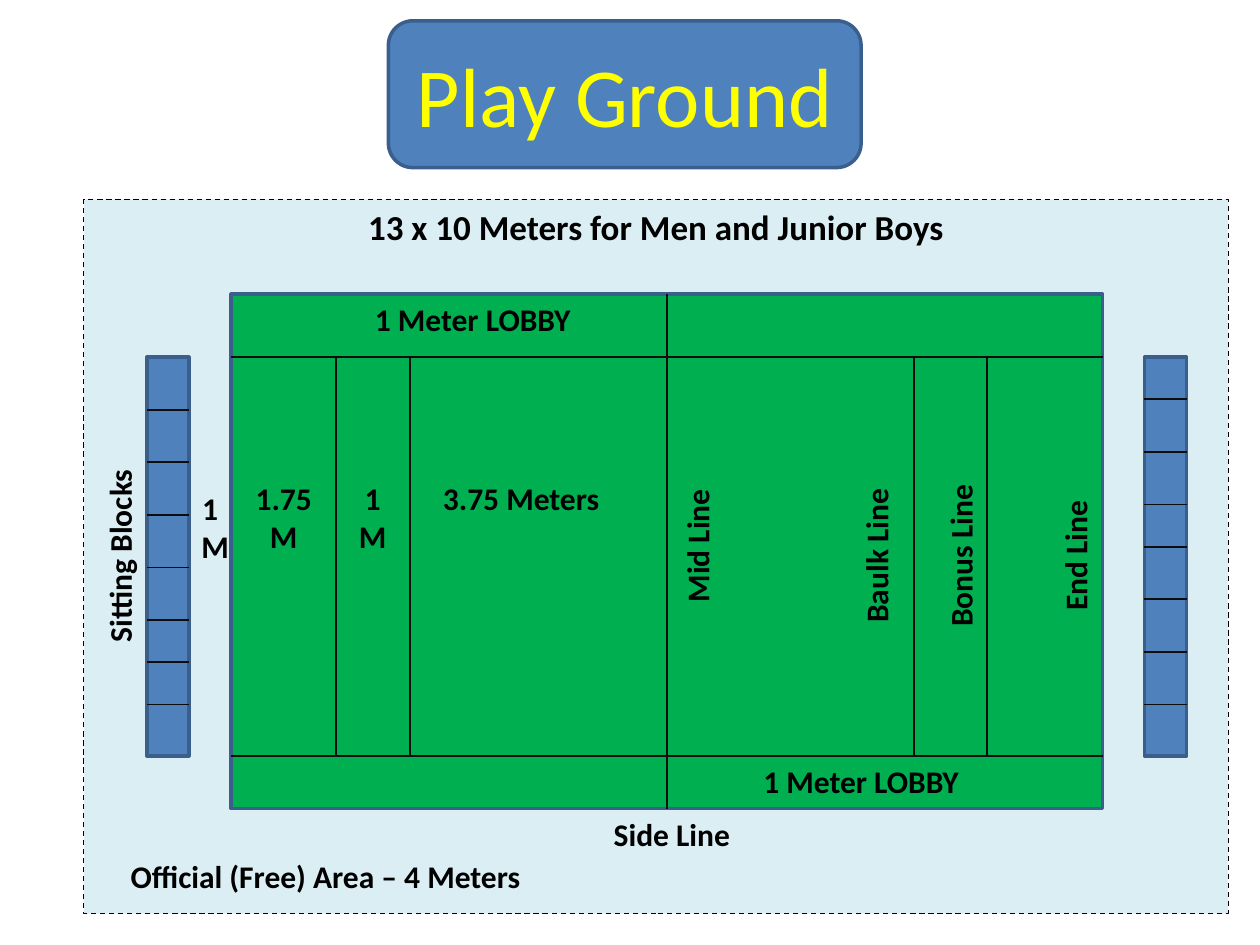
from dataclasses import dataclass
from itertools import accumulate

from pptx import Presentation
from pptx import util as u
from pptx.dml.color import RGBColor
from pptx.enum import dml, shapes, text
from pptx.oxml.ns import qn

BLACK, MARKING, YELLOW = "000000", "0D0D0D", "FFFF00"
BLUE, BLUE_EDGE, GREEN, PALE = "4F81BD", "3A5F8C", "00B050", "DBEEF4"
CENTER, LEFT = text.PP_ALIGN.CENTER, text.PP_ALIGN.LEFT
RECT, ROUNDED = shapes.MSO_SHAPE.RECTANGLE, shapes.MSO_SHAPE.ROUNDED_RECTANGLE


@dataclass(frozen=True)
class Box:
    """Position and size in centimetres."""
    left: float
    top: float
    width: float
    height: float

    @property
    def right(self) -> float:
        return self.left + self.width

    @property
    def bottom(self) -> float:
        return self.top + self.height

    def lengths(self) -> list:
        return [u.Cm(v) for v in (self.left, self.top, self.width, self.height)]


@dataclass(frozen=True)
class Label:
    wording: str
    left: float
    top: float
    width: float
    height: float = 1.03
    rotation: int = 0
    align: text.PP_ALIGN = CENTER


@dataclass(frozen=True)
class Bench:
    box: Box
    seats: tuple


# Ground layout
AREA = Box(1.69, 4.02, 23.07, 14.4)
BADGE = Box(7.83, 0.42, 9.53, 2.96)
COURT = Box(4.66, 5.93, 17.57, 10.37)
PLAY_TOP, PLAY_BOTTOM = 7.2, 15.24
MID_LINE = 13.44
INNER_LINES = (6.77, 8.26, 18.42, 19.9)

# Benches: seat heights from the top, the last seat takes the rest
TALL, SHORT = 1.06, 0.85
BENCH_WIDTH, BENCH_HEIGHT = 0.85, PLAY_BOTTOM - PLAY_TOP
BENCHES = (
    Bench(Box(23.07, PLAY_TOP, BENCH_WIDTH, BENCH_HEIGHT),
          (SHORT, TALL, TALL, SHORT, TALL, TALL, TALL)),
    Bench(Box(2.96, PLAY_TOP, BENCH_WIDTH, BENCH_HEIGHT),
          (TALL, TALL, TALL, TALL, TALL, SHORT, SHORT)),
)

TWO_LINES = 1.8
LABELS = (
    Label("3.75 Meters", 8.68, 9.53, 4.23, align=LEFT),
    Label("1 M", 6.77, 9.53, 1.48, TWO_LINES),
    Label("1.75 M", 4.66, 9.53, 2.12, TWO_LINES),
    Label("1 Meter LOBBY", 5.72, 5.93, 7.62),
    Label("1 Meter LOBBY", 13.55, 15.24, 7.62),
    Label("Baulk Line", 15.55, 10.69, 4.23, rotation=270),
    Label("Bonus Line", 17.25, 10.69, 4.23, rotation=270),
    Label("Mid Line", 11.94, 10.49, 4.23, rotation=270),
    Label("End Line", 19.56, 10.69, 4.23, rotation=270),
    Label("Side Line", 11.43, 16.3, 4.23),
    Label("Sitting Blocks", 0.3, 10.69, 4.23, rotation=270),
    Label("Official (Free) Area – 4 Meters", 2.33, 17.15, 8.47),
    Label("1 M", 3.81, 9.74, 0.85, TWO_LINES),
)


def paint(color_format, color: str) -> None:
    color_format.rgb = RGBColor.from_string(color)


def write(frame, wording: str, size: int, color: str = BLACK,
          bold: bool = True, align=CENTER, anchor=text.MSO_ANCHOR.TOP) -> None:
    for name, value in {"word_wrap": True, "vertical_anchor": anchor}.items():
        setattr(frame, name, value)
    paragraph = frame.paragraphs[0]
    paragraph.alignment = align
    run = paragraph.add_run()
    run.text = wording
    formats = {"name": "Calibri", "size": u.Pt(size), "bold": bold}
    for name, value in formats.items():
        setattr(run.font, name, value)
    paint(run.font.color, color)


def draw_panel(slide, box: Box, fill: str, edge: str = BLUE_EDGE,
               weight: float = 2, preset=RECT):
    panel = slide.shapes.add_shape(preset, *box.lengths())
    panel.shadow.inherit = False
    panel.fill.solid()
    paint(panel.fill.fore_color, fill)
    paint(panel.line.color, edge)
    panel.line.width = u.Pt(weight)
    return panel


def draw_line(slide, x1: float, y1: float, x2: float, y2: float) -> None:
    line = slide.shapes.add_connector(
        shapes.MSO_CONNECTOR.STRAIGHT, *(u.Cm(v) for v in (x1, y1, x2, y2)))
    paint(line.line.color, MARKING)
    line.line.width = u.Pt(1)
    properties = line.element.spPr
    properties.append(properties.makeelement(qn("a:effectLst"), {}))


def draw_bench(slide, bench: Bench) -> None:
    draw_panel(slide, bench.box, BLUE)
    for offset in accumulate(bench.seats):
        y = bench.box.top + offset
        draw_line(slide, bench.box.left, y, bench.box.right, y)


def draw_label(slide, label: Label) -> None:
    box = Box(label.left, label.top, label.width, label.height)
    caption = slide.shapes.add_textbox(*box.lengths())
    caption.rotation = label.rotation
    write(caption.text_frame, label.wording, 18, align=label.align)


def main() -> None:
    deck = Presentation()
    deck.slide_width, deck.slide_height = u.Cm(25.4), u.Cm(19.05)
    slide = deck.slides.add_slide(deck.slide_layouts[5])

    # Title on its rounded badge
    title = slide.shapes.title
    title.left, title.top, title.width, title.height = BADGE.lengths()
    write(title.text_frame, "Play Ground", 48, YELLOW, bold=False,
          anchor=text.MSO_ANCHOR.MIDDLE)
    badge = draw_panel(slide, BADGE, BLUE, preset=ROUNDED)
    title.element.addprevious(badge.element)

    # Official area
    area = draw_panel(slide, AREA, PALE, BLACK, 0.75)
    area.line.dash_style = dml.MSO_LINE.DASH
    write(area.text_frame, "13 x 10 Meters for Men and Junior Boys", 20)

    # Court and its markings
    draw_panel(slide, COURT, GREEN)
    draw_line(slide, MID_LINE, COURT.top, MID_LINE, COURT.bottom)
    for x in INNER_LINES:
        draw_line(slide, x, PLAY_TOP, x, PLAY_BOTTOM)
    for y in (PLAY_TOP, PLAY_BOTTOM):
        draw_line(slide, COURT.left, y, COURT.right, y)

    # Sitting blocks and captions
    for bench in BENCHES:
        draw_bench(slide, bench)
    for label in LABELS:
        draw_label(slide, label)

    deck.save("out.pptx")


if __name__ == "__main__":
    main()
